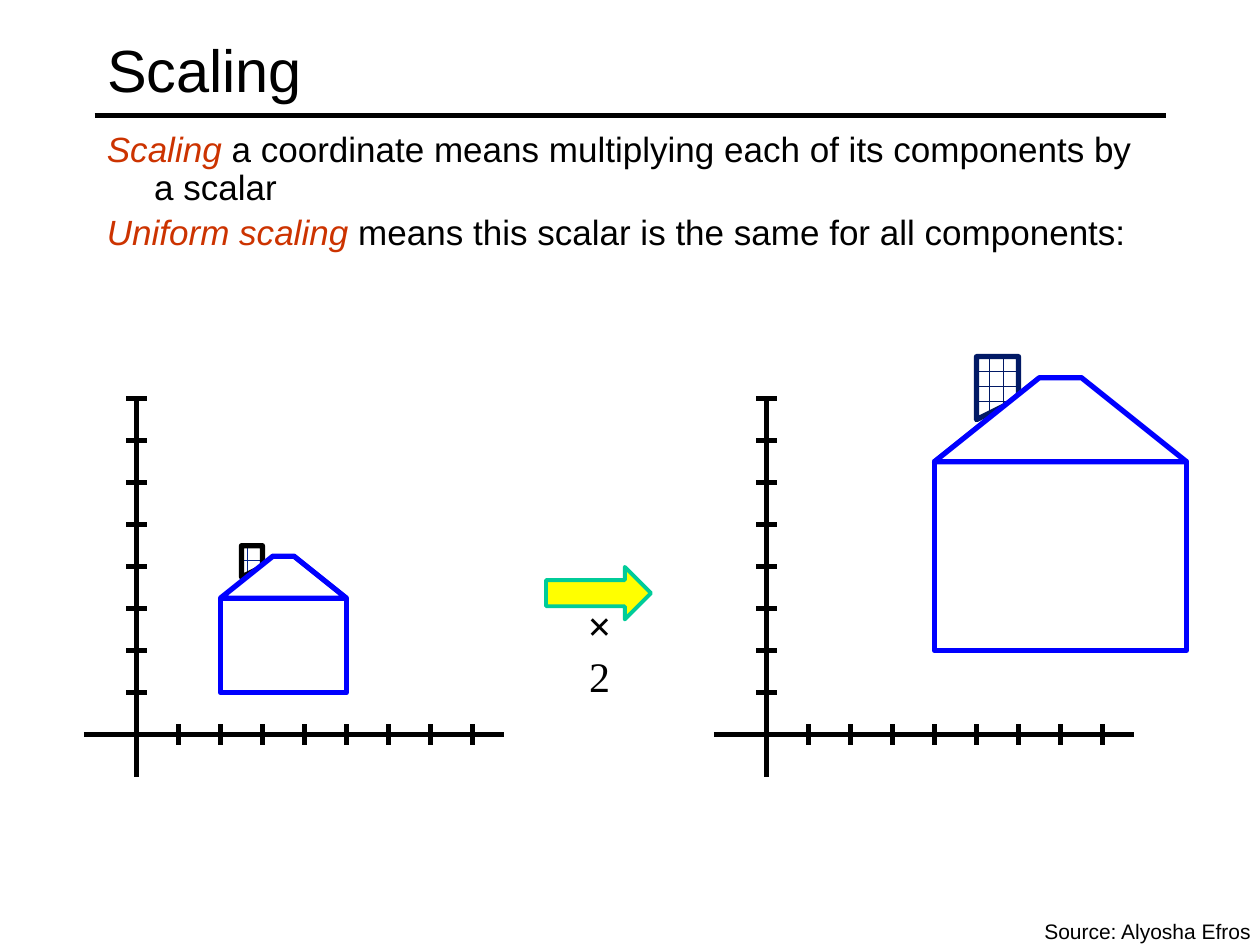
import pptx
import pptx.util
import pptx.oxml.xmlchemy
import pptx.dml.color
import pptx.enum.dml
import pptx.enum.shapes
import pptx.enum.text

Pt = pptx.util.Pt
RGB = pptx.dml.color.RGBColor
Shape = pptx.enum.shapes.MSO_SHAPE
Align = pptx.enum.text.PP_ALIGN
Anchor = pptx.enum.text.MSO_ANCHOR

BLACK = RGB(0, 0, 0)
WHITE = RGB(255, 255, 255)
RED = RGB(0xCC, 0x33, 0x00)
BLUE = RGB(0, 0, 255)
NAVY = RGB(0x01, 0x19, 0x65)
BRICK = RGB(0x03, 0x23, 0x89)
YELLOW = RGB(255, 255, 0)
GREEN = RGB(0x00, 0xCC, 0x99)

UNIT = 24      # one step on an axis
BASE = 419.8   # height of the horizontal axes
STEPS = 8


class Page:
    def __init__(self, slide):
        self.slide = slide
        self.font = "Arial"
        self.line = 3

    def group(self):
        return self.slide.shapes.add_group_shape().shapes

    def rule(self, shapes, x1, y1, x2, y2):
        kind = pptx.enum.shapes.MSO_CONNECTOR.STRAIGHT
        rule = shapes.add_connector(kind, Pt(x1), Pt(y1), Pt(x2), Pt(y2))
        rule.line.color.rgb = BLACK
        rule.line.width = Pt(self.line)
        effects = pptx.oxml.xmlchemy.OxmlElement("a:effectLst")
        rule._element.spPr.append(effects)

    def paint(self, shape, fill, edge, width=None):
        shape.shadow.inherit = False
        if fill is not None:
            shape.fill.solid()
            shape.fill.fore_color.rgb = fill
        shape.line.color.rgb = edge
        shape.line.width = Pt(width or self.line)

    def block(self, shapes, kind, box, fill, edge, width=None):
        shape = shapes.add_shape(kind, *map(Pt, box))
        self.paint(shape, fill, edge, width)

    def outline(self, shapes, points, fill, edge):
        spots = [(Pt(x), Pt(y)) for x, y in points]
        pen = shapes.build_freeform(*spots[0])
        pen.add_line_segments(spots[1:], close=True)
        shape = pen.convert_to_shape()
        self.paint(shape, fill, edge)
        return shape

    def style(self, run, size, color=BLACK, font=None):
        run.font.name = font or self.font
        run.font.size = Pt(size)
        run.font.color.rgb = color

    def title(self, text, box, size):
        head = self.slide.shapes.title
        head.left, head.top, head.width, head.height = map(Pt, box)
        frame = head.text_frame
        frame.text = text
        frame.vertical_anchor = Anchor.MIDDLE
        frame.paragraphs[0].alignment = Align.LEFT
        self.style(frame.paragraphs[0].runs[0], size)

    def text(self, box):
        frame = self.slide.shapes.add_textbox(*map(Pt, box)).text_frame
        frame.word_wrap = True
        return frame

    def terms(self, box, items, size):
        """Hanging paragraphs, each led by a red italic term."""
        frame = self.text(box)
        for i, (term, rest) in enumerate(items):
            para = frame.add_paragraph() if i else frame.paragraphs[0]
            para.line_spacing = 0.9
            para.space_before = Pt(0.2 * size)
            props = para._p.get_or_add_pPr()
            props.set("marL", str(Pt(27)))
            props.set("indent", str(-Pt(27)))
            for words, color in ((term, RED), (rest, BLACK)):
                run = para.add_run()
                run.text = words
                run.font.italic = color == RED
                self.style(run, size, color)

    def axes(self, left):
        shapes = self.group()
        self.rule(shapes, left, BASE - STEPS * UNIT, left, BASE + UNIT)
        self.rule(shapes, left - 30, BASE, left + 210, BASE)
        for i in range(1, STEPS + 1):
            x, y = left + i * UNIT, BASE - i * UNIT
            self.rule(shapes, x, BASE - 6, x, BASE + 6)
            self.rule(shapes, left - 6, y, left + 6, y)

    def house(self, left, scale, brick, edge):
        """Draw the house with its axis coordinates multiplied by scale."""
        shapes = self.group()
        step = UNIT * scale

        def place(*points):
            return [(left + x * step, BASE - y * step) for x, y in points]

        flue = place((2.5, 3.75), (2.5, 4.5), (3, 4.5), (3, 4))
        flue = self.outline(shapes, flue, None, edge)
        flue.fill.patterned()
        flue.fill.pattern = pptx.enum.dml.MSO_PATTERN.HORIZONTAL_BRICK
        flue.fill.fore_color.rgb = brick
        flue.fill.back_color.rgb = WHITE
        wall = (*place((2, 3.25))[0], 3 * step, 2.25 * step)
        self.block(shapes, Shape.RECTANGLE, wall, WHITE, BLUE)
        roof = place((2, 3.25), (3.25, 4.25), (3.75, 4.25), (5, 3.25))
        self.outline(shapes, roof, WHITE, BLUE)


def main():
    deck = pptx.Presentation()
    deck.slide_width, deck.slide_height = Pt(720), Pt(540)
    page = Page(deck.slides.add_slide(deck.slide_layouts[5]))
    shapes = page.slide.shapes

    page.rule(shapes, 54, 66, 666, 66)
    page.title("Scaling", (54, 6, 612, 66), 34)
    page.terms((54, 72, 612, 188), [
        ("Scaling", " a coordinate means multiplying each of its "
                    "components by a scalar"),
        ("Uniform scaling", " means this scalar is the same for all "
                            "components:"),
    ], 20)

    for left, scale, brick, edge in ((78, 1, BRICK, BLACK),
                                     (438, 2, NAVY, NAVY)):
        page.axes(left)
        page.house(left, scale, brick, edge)

    page.block(shapes, Shape.RIGHT_ARROW, (312, 324, 60, 30),
               YELLOW, GREEN, 2.25)
    times = page.text((320.2, 353.5, 45, 36))
    times.vertical_anchor = Anchor.MIDDLE
    para = times.paragraphs[0]
    para.alignment = Align.CENTER
    for words, bold in (("× ", True), ("2", False)):
        run = para.add_run()
        run.text = words
        run.font.bold = bold
        page.style(run, 24, font="Times New Roman")

    credit = page.text((589.7, 521.3, 201.6, 21.6))
    credit.text = "Source: Alyosha Efros"
    page.style(credit.paragraphs[0].runs[0], 12)

    deck.save("out.pptx")


if __name__ == "__main__":
    main()
